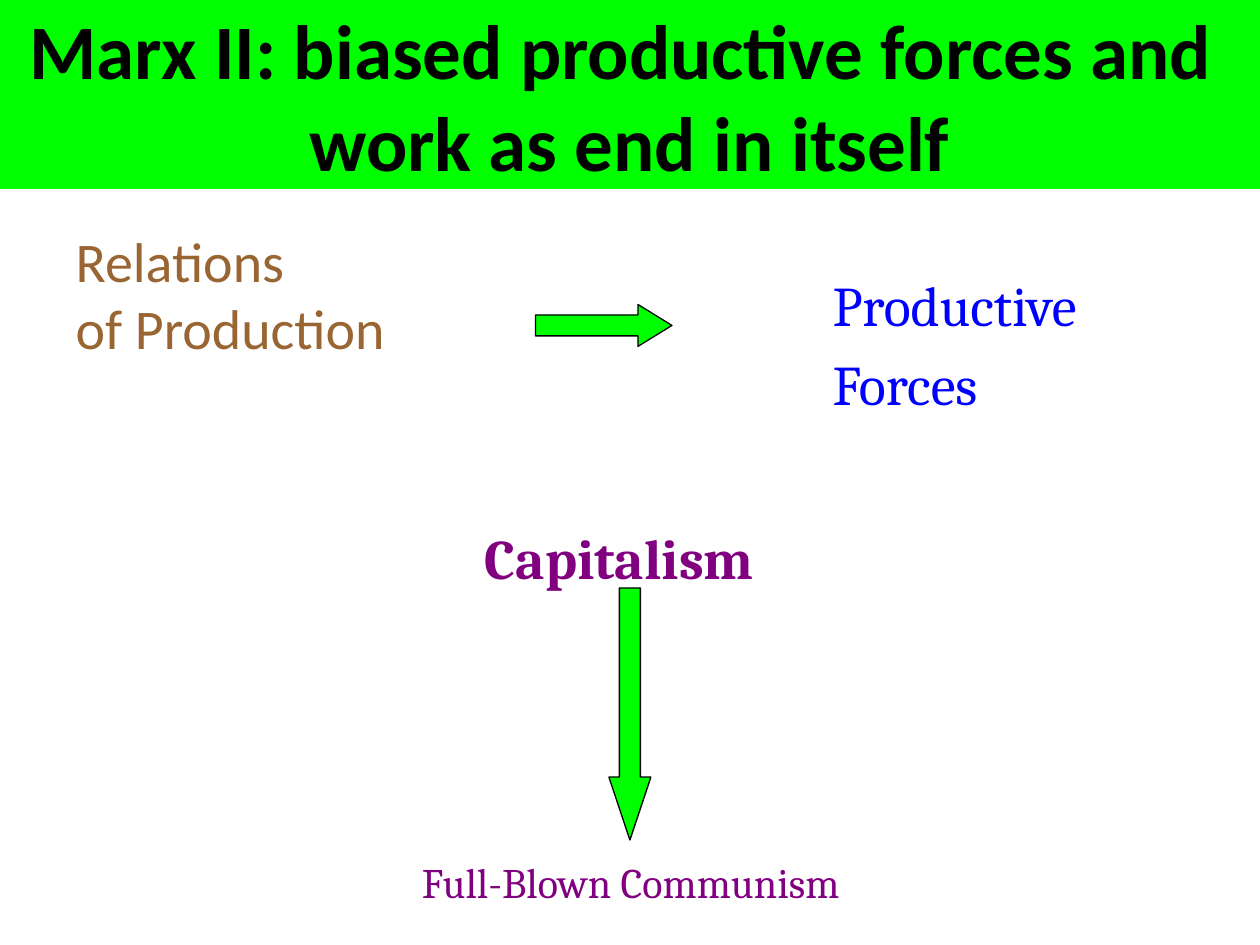
from dataclasses import dataclass

from lxml import etree
from pptx import Presentation
from pptx import util as u
from pptx.dml.color import RGBColor
from pptx.enum import shapes, text
from pptx.oxml.ns import qn

WIDTH, HEIGHT = u.Inches(10), u.Inches(7.5)
COLOURS = {
    "green": "00FF00",
    "black": "000000",
    "brown": "996633",
    "blue": "0000FF",
    "purple": "800080",
}


@dataclass
class Box:
    """Left, top, width and height in percent of the slide's size."""
    left: float
    top: float
    width: float
    height: float

    def emu(self) -> tuple:
        sides = (WIDTH, HEIGHT, WIDTH, HEIGHT)
        shares = (self.left, self.top, self.width, self.height)
        return tuple(round(side * share / 100) for side, share in zip(sides, shares))


@dataclass
class Style:
    font: str
    size: int
    colour: str
    bold: bool = False
    space_before: float = 0


@dataclass
class Label:
    box: Box
    lines: list
    style: Style


@dataclass
class Arrow:
    box: Box
    kind: shapes.MSO_SHAPE
    head: float


TITLE = Label(Box(0, 0, 100, 20), ["Marx II: biased productive forces and  work as end in itself"],
              Style("Calibri", 44, "black", bold=True))
RELATIONS = Label(Box(5, 23.33, 90, 66), ["Relations", "of Production"],
                  Style("Calibri", 32, "brown"))
LABELS = [
    Label(Box(65.1, 28, 23, 16.93), ["Productive", "Forces"],
          Style("Cambria", 32, "blue", space_before=6.4)),
    Label(Box(37.5, 54.8, 24.5, 8.4), ["Capitalism"],
          Style("Cambria", 32, "purple", bold=True)),
    Label(Box(32.5, 90, 37.2, 6.67), ["Full-Blown Communism"],
          Style("Cambria", 24, "purple")),
]
ARROWS = [
    Arrow(Box(42.5, 32.22, 10.83, 4.44), shapes.MSO_SHAPE.RIGHT_ARROW, 0.81),
    Arrow(Box(48.33, 62.22, 3.33, 26.67), shapes.MSO_SHAPE.DOWN_ARROW, 1.5),
]


def rgb(name: str) -> RGBColor:
    return RGBColor.from_string(COLOURS[name])


def place(sp, box: Box) -> None:
    sp.left, sp.top, sp.width, sp.height = box.emu()


def write(tf, label: Label) -> None:
    style = label.style
    for i, line in enumerate(label.lines):
        p = tf.add_paragraph() if i else tf.paragraphs[0]
        p.space_before = u.Pt(style.space_before)
        r = p.add_run()
        r.text = line
        r.font.name = style.font
        r.font.size = u.Pt(style.size)
        r.font.bold = style.bold
        r.font.color.rgb = rgb(style.colour)


def fill_placeholder(sp, label: Label) -> None:
    place(sp, label.box)
    write(sp.text_frame, label)
    sp.text_frame.auto_size = text.MSO_AUTO_SIZE.NONE


def remove_bullets(tf) -> None:
    for p in tf.paragraphs:
        props = p._p.get_or_add_pPr()
        props.set("marL", str(u.Inches(0.38)))
        props.set("indent", str(-u.Inches(0.38)))
        etree.SubElement(props, qn("a:buNone"))


def add_label(s, label: Label) -> None:
    tf = s.shapes.add_textbox(*label.box.emu()).text_frame
    tf.word_wrap = False
    tf.auto_size = text.MSO_AUTO_SIZE.SHAPE_TO_FIT_TEXT
    write(tf, label)


def add_arrow(s, arrow: Arrow) -> None:
    sp = s.shapes.add_shape(arrow.kind, *arrow.box.emu())
    sp.adjustments[0] = 0.5
    sp.adjustments[1] = arrow.head
    sp.shadow.inherit = False
    sp.fill.solid()
    sp.fill.fore_color.rgb = rgb("green")
    sp.line.color.rgb = rgb("black")
    sp.line.width = u.Pt(0.75)


def main() -> None:
    prs = Presentation()
    prs.slide_width, prs.slide_height = WIDTH, HEIGHT
    s = prs.slides.add_slide(prs.slide_layouts[1])

    title, body = s.shapes.title, s.placeholders[1]
    fill_placeholder(title, TITLE)
    title.fill.solid()
    title.fill.fore_color.rgb = rgb("green")
    title.text_frame.vertical_anchor = text.MSO_ANCHOR.MIDDLE
    title.text_frame.paragraphs[0].alignment = text.PP_ALIGN.CENTER
    fill_placeholder(body, RELATIONS)
    remove_bullets(body.text_frame)

    for arrow in ARROWS:
        add_arrow(s, arrow)
    for label in LABELS:
        add_label(s, label)
    prs.save("out.pptx")


if __name__ == "__main__":
    main()
